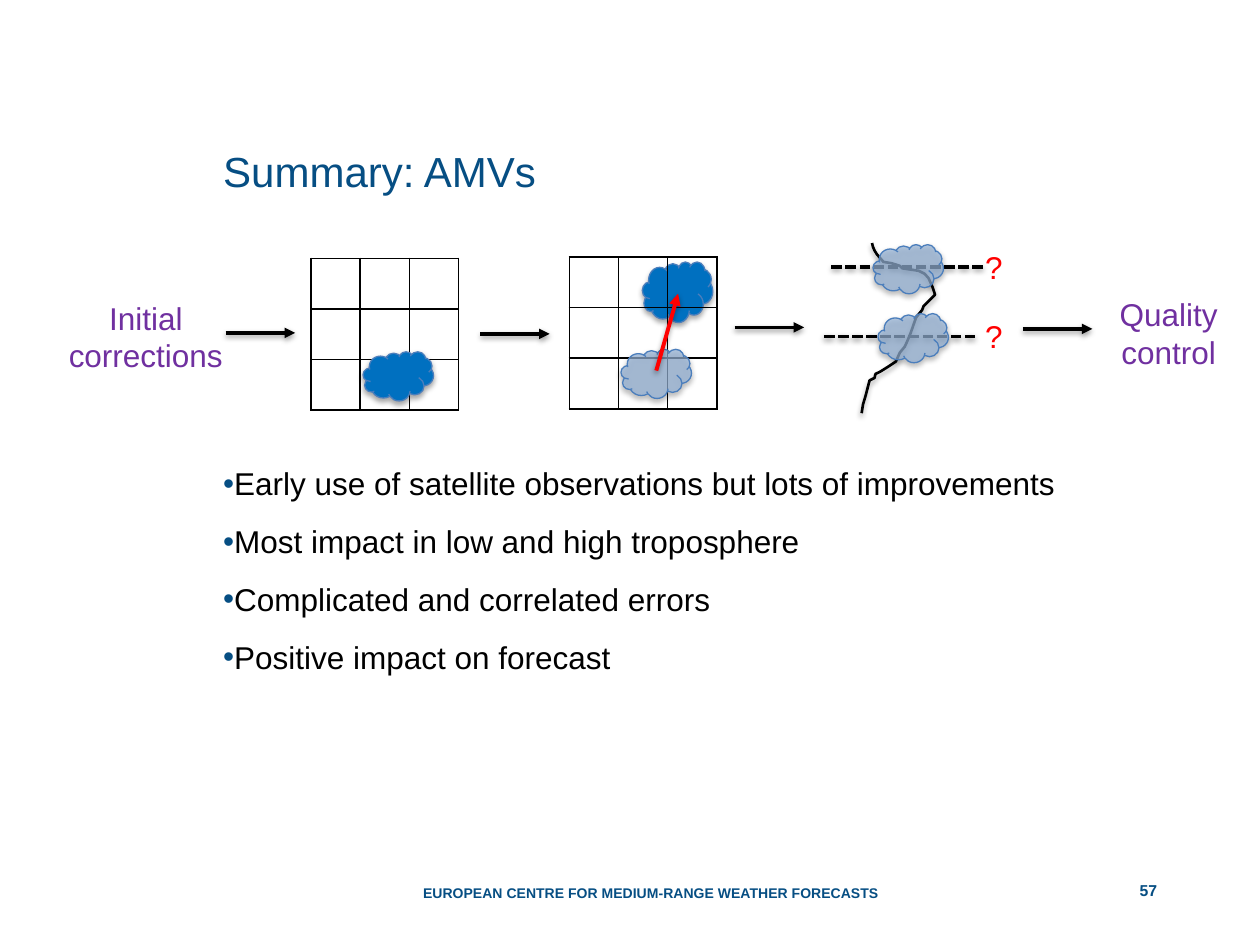
from dataclasses import dataclass

from lxml.etree import SubElement
from pptx import Presentation
from pptx.dml.color import RGBColor
from pptx.enum.dml import MSO_LINE
from pptx.enum.shapes import MSO_CONNECTOR, MSO_SHAPE
from pptx.enum.text import MSO_ANCHOR as Anchor, PP_ALIGN as Align
from pptx.oxml.ns import qn
from pptx.util import Cm, Pt

COLORS = {
    "navy": "064E83",
    "black": "000000",
    "purple": "7030A0",
    "red": "FF0000",
    "blue": "0070C0",
    "pale": "95B3D7",
    "outline": "4B7EBC",
}
WIND_PROFILE = [
    (17.37, 8.33), (17.4, 8.15), (17.45, 7.98), (17.53, 7.67), (17.63, 7.62),
    (17.65, 7.54), (17.75, 7.49), (17.91, 7.39), (18.06, 7.29), (18.14, 7.11),
    (18.24, 6.99), (18.29, 6.88), (18.36, 6.71), (18.44, 6.48), (18.47, 6.4),
    (18.59, 6.25), (18.62, 6.17), (18.67, 6.12), (18.8, 5.99), (18.85, 5.94),
    (18.8, 5.79), (18.72, 5.61), (18.64, 5.52), (18.52, 5.46), (18.19, 5.41),
    (18.14, 5.36), (17.98, 5.31), (17.81, 5.28), (17.68, 5.13), (17.63, 5.05),
    (17.6, 4.98), (17.58, 4.9),
]
BULLETS = [
    "Early use of satellite observations but lots of improvements",
    "Most impact in low and high troposphere",
    "Complicated and correlated errors",
    "Positive impact on forecast",
]


@dataclass
class Label:
    text: str
    left: float
    top: float
    width: float
    height: float
    size: float
    color: str
    bold: bool = False
    align: Align = Align.LEFT
    anchor: Anchor = Anchor.TOP
    insets: tuple = (0, 0, 0, 0)
    line_spacing: float | None = None
    space_before: float = 0
    bullet: str | None = None


@dataclass
class Cloud:
    left: float
    top: float
    height: float = 0.99
    color: str = "pale"
    opacity: int = 70


@dataclass
class Line:
    start: tuple
    end: tuple
    color: str = "black"
    width: float = 2
    dashed: bool = False


def rgb(name: str) -> RGBColor:
    return RGBColor.from_string(COLORS[name])


def add_shadow(shape, opacity: int, distance: float) -> None:
    effects = SubElement(shape._element.spPr, qn("a:effectLst"))
    shadow = SubElement(
        effects, qn("a:outerShdw"), blurRad=str(int(Pt(3.1))),
        dist=str(int(Pt(distance))), dir="5400000", rotWithShape="0",
    )
    color = SubElement(shadow, qn("a:srgbClr"), val=COLORS["black"])
    SubElement(color, qn("a:alpha"), val=str(opacity * 1000))


def add_bullet(paragraph, character: str) -> None:
    properties = paragraph._p.get_or_add_pPr()
    properties.set("marL", "0")
    properties.set("indent", str(int(Cm(-0.51))))
    color = SubElement(properties, qn("a:buClr"))
    SubElement(color, qn("a:srgbClr"), val=COLORS["navy"])
    SubElement(properties, qn("a:buFont"), typeface="Arial")
    SubElement(properties, qn("a:buChar"), char=character)


def add_label(slide, label: Label) -> None:
    box = slide.shapes.add_textbox(
        Cm(label.left), Cm(label.top), Cm(label.width), Cm(label.height)
    )
    frame = box.text_frame
    frame.word_wrap = True
    frame.vertical_anchor = label.anchor
    frame.margin_left, frame.margin_top, frame.margin_right, frame.margin_bottom = map(
        Cm, label.insets
    )
    frame.text = label.text
    for index, paragraph in enumerate(frame.paragraphs):
        paragraph.alignment = label.align
        if label.line_spacing:
            paragraph.line_spacing = Pt(label.line_spacing)
        if index:
            paragraph.space_before = Pt(label.space_before)
        if label.bullet:
            add_bullet(paragraph, label.bullet)
        font = paragraph.font
        font.name, font.size, font.bold = "Arial", Pt(label.size), label.bold
        font.color.rgb = rgb(label.color)


def add_grid(slide, left: float, top: float, count: int = 3) -> None:
    frame = slide.shapes.add_table(
        count, count, Cm(left), Cm(top), Cm(0.99 * count), Cm(1.02 * count)
    )
    table = frame.table
    table.first_row = table.horz_banding = False
    for cell in table.iter_cells():
        cell.fill.background()
        properties = cell._tc.get_or_add_tcPr()
        for index, side in enumerate("LRTB"):
            border = SubElement(properties, qn(f"a:ln{side}"), w=str(int(Pt(1))))
            fill = SubElement(border, qn("a:solidFill"))
            SubElement(fill, qn("a:srgbClr"), val=COLORS["black"])
            properties.insert(index, border)


def add_cloud(slide, cloud: Cloud) -> None:
    shape = slide.shapes.add_shape(
        MSO_SHAPE.CLOUD, Cm(cloud.left), Cm(cloud.top), Cm(1.42), Cm(cloud.height)
    )
    shape.fill.solid()
    shape.fill.fore_color.rgb = rgb(cloud.color)
    color = shape._element.spPr.find(qn("a:solidFill"))[0]
    SubElement(color, qn("a:alpha"), val=str(cloud.opacity * 1000))
    shape.line.color.rgb = rgb("outline")
    shape.line.width = Pt(0.75)
    add_shadow(shape, 35, 1.8)


def add_line(slide, line: Line) -> None:
    connector = slide.shapes.add_connector(
        MSO_CONNECTOR.STRAIGHT, *map(Cm, line.start + line.end)
    )
    connector.line.color.rgb = rgb(line.color)
    connector.line.width = Pt(line.width)
    if line.dashed:
        connector.line.dash_style = MSO_LINE.SQUARE_DOT
    else:
        SubElement(connector._element.spPr.find(qn("a:ln")), qn("a:tailEnd"), type="triangle")
    add_shadow(connector, 38, 1.6)


def add_profile(slide, points: list) -> None:
    start, *rest = [(Cm(x), Cm(y)) for x, y in points]
    builder = slide.shapes.build_freeform(*start)
    builder.add_line_segments(rest, close=False)
    shape = builder.convert_to_shape()
    shape.fill.background()
    shape.line.color.rgb = rgb("black")
    shape.line.width = Pt(1.5)
    add_shadow(shape, 35, 1.8)


def main() -> None:
    """Build the summary slide on atmospheric motion vectors."""
    presentation = Presentation()
    presentation.slide_width, presentation.slide_height = Cm(25.4), Cm(19.05)
    slide = presentation.slides.add_slide(presentation.slide_layouts[6])
    padding = (0.25, 0.13, 0.25, 0.13)

    for label in (
        Label("EUROPEAN CENTRE FOR MEDIUM-RANGE WEATHER FORECASTS", 8.23, 17.53, 9.58, 0.64,
              8, "navy", bold=True, anchor=Anchor.BOTTOM, insets=(0.3, 0, 0, 0)),
        Label("Summary: AMVs", 4.5, 2.97, 16.41, 1.02, 24, "navy", line_spacing=28),
        Label("\n".join(BULLETS), 4.5, 9.35, 17.09, 7.39, 18, "black",
              line_spacing=22, space_before=11, bullet="•"),
        Label("57", 20.9, 17.53, 4.5, 0.61, 9, "navy", bold=True,
              align=Align.CENTER, anchor=Anchor.BOTTOM),
    ):
        add_label(slide, label)

    add_grid(slide, 6.27, 5.21)
    add_cloud(slide, Cloud(7.32, 7.09, color="blue", opacity=100))
    add_cloud(slide, Cloud(12.95, 5.28, 1.22, "blue", 100))
    add_grid(slide, 11.48, 5.18)
    add_cloud(slide, Cloud(12.52, 7.04))
    add_line(slide, Line((13.23, 7.47), (13.67, 5.92), "red", 2.25))

    for left, y in ((4.55, 6.71), (9.68, 6.73), (14.81, 6.6), (20.62, 6.63)):
        add_line(slide, Line((left, y), (left + 1.4, y)))

    add_profile(slide, WIND_PROFILE)
    for left, y in ((16.76, 5.38), (16.61, 6.78)):
        add_line(slide, Line((left, y), (left + 3.12, y), dashed=True))
    for left, top in ((17.7, 6.32), (17.6, 4.93)):
        add_cloud(slide, Cloud(left, top))
    for top in (4.88, 6.27):
        add_label(slide, Label("?", 19.61, top, 0.86, 1.02, 18, "red", insets=padding))
    for text, left, top in (("Initial corrections", 0.97, 5.89), ("Quality control", 21.59, 5.82)):
        add_label(slide, Label(text, left, top, 3.94, 1.8, 18, "purple",
                               align=Align.CENTER, insets=padding))
    presentation.save("out.pptx")


if __name__ == "__main__":
    main()
